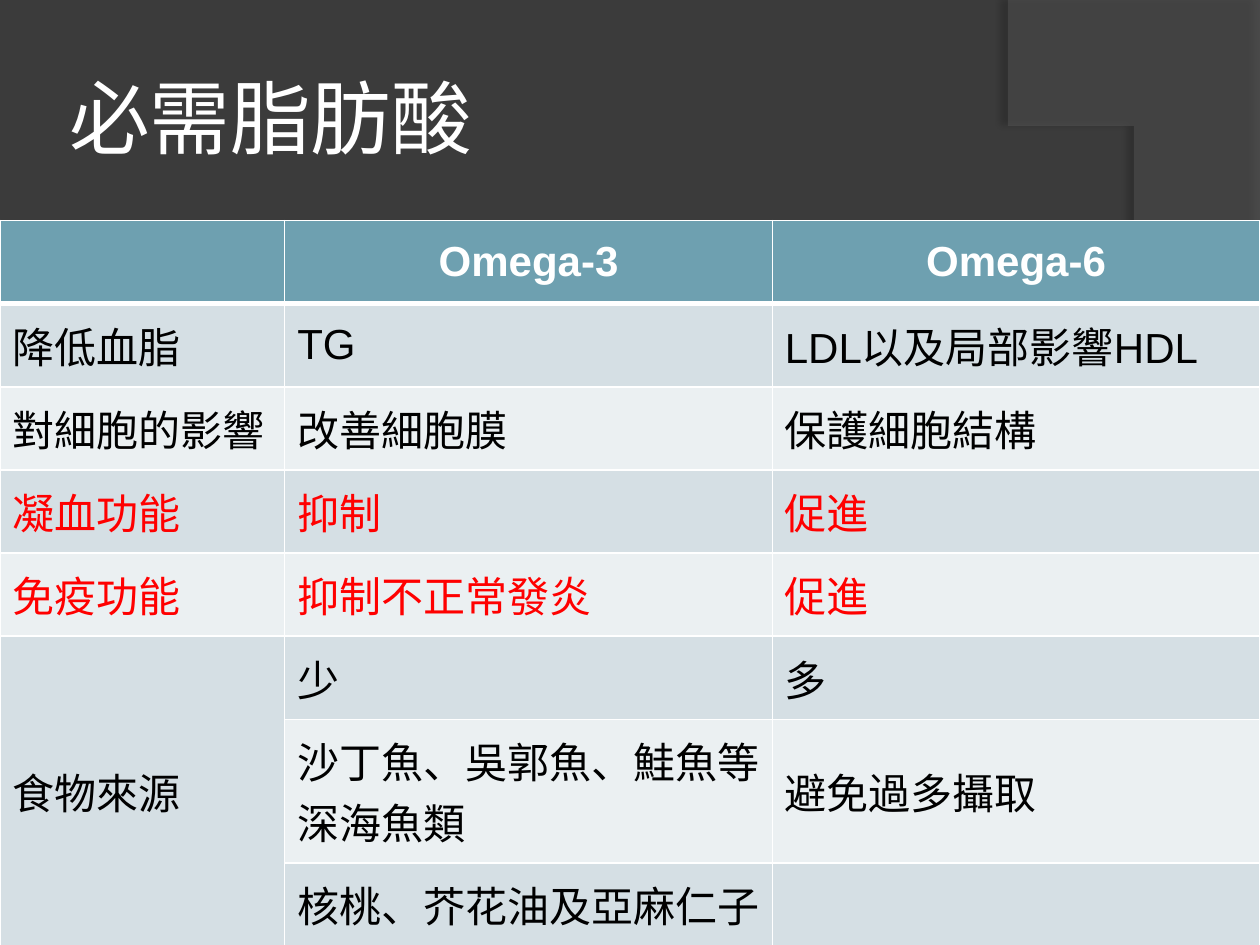
from lxml.etree import SubElement
from pptx import Presentation
from pptx.dml.color import RGBColor
from pptx.enum.text import MSO_ANCHOR, PP_ALIGN
from pptx.oxml import parse_xml
from pptx.oxml.ns import nsdecls, qn
from pptx.util import Inches, Pt

COLORS = {"back": "3B3B3B", "arc": "5E5E5E", "white": "FFFFFF", "black": "000000",
          "red": "FF0000", "head": "6EA0B0", "odd": "D5DFE4", "even": "EBF0F2"}


def rgb(name):
    return RGBColor.from_string(COLORS[name])


def write(tf, text, align=PP_ALIGN.LEFT, **font):
    p = tf.paragraphs[0]
    p.alignment = align
    r = p.add_run()
    r.text = text
    r.font.color.rgb = rgb(font.pop("color"))
    for key, value in font.items():
        setattr(r.font, key, value)


prs = Presentation()
prs.slide_width, prs.slide_height = W, H = Inches(10), Inches(7.5)
s = prs.slides.add_slide(prs.slide_layouts[6])
s.background.fill.solid()
s.background.fill.fore_color.rgb = rgb("back")

# Curved panel on the right: a cubic arc as short segments
arc = [(8.21, 7.5), (9.35, 6.19), (10.18, 3), (8, 0)]
STEPS = 40
points = [(10, 7.5)]
for i in range(STEPS + 1):
    t = i / STEPS
    weights = ((1 - t) ** 3, 3 * t * (1 - t) ** 2, 3 * t ** 2 * (1 - t), t ** 3)
    points.append(tuple(sum(w * pt[axis] for w, pt in zip(weights, arc)) for axis in (0, 1)))
fb = s.shapes.build_freeform(10, 0.02, scale=Inches(1))
fb.add_line_segments(points, close=True)
sp = fb.convert_to_shape()
sp.fill.solid()
sp.fill.fore_color.rgb = rgb("arc")
sp.line.fill.background()
color = sp.fill._xPr.find(qn("a:solidFill"))[0]
SubElement(color, qn("a:alpha"), val="40000")
sp._element.spPr.append(parse_xml(
    f'<a:effectLst {nsdecls("a")}><a:outerShdw blurRad="{Pt(4)}" dist="{Pt(4)}" dir="10800000">'
    f'<a:srgbClr val="{COLORS["black"]}"><a:alpha val="45000"/></a:srgbClr>'
    '</a:outerShdw></a:effectLst>'))

# Title
sp = s.shapes.add_textbox(int(W * 0.05), int(H * 0.04), Inches(8.17), Inches(1.25))
tf = sp.text_frame
frame = {"word_wrap": True, "vertical_anchor": MSO_ANCHOR.MIDDLE}
frame.update({f"margin_{side}": Inches(0.05) for side in ("left", "top", "right", "bottom")})
for key, value in frame.items():
    setattr(tf, key, value)
write(tf, "必需脂肪酸", size=Pt(46), name="Roboto", color="white")

# Comparison table
rows = [
    ("", "Omega-3", "Omega-6"),
    ("降低血脂", "TG", "LDL以及局部影響HDL"),
    ("對細胞的影響", "改善細胞膜", "保護細胞結構"),
    ("凝血功能", "抑制", "促進"),
    ("免疫功能", "抑制不正常發炎", "促進"),
    ("食物來源", "少", "多"),
    ("", "沙丁魚、吳郭魚、鮭魚等深海魚類", "避免過多攝取"),
    ("", "核桃、芥花油及亞麻仁子", ""),
]
RED_ROWS, TALL_ROW, SOURCE_ROW = (3, 4), 6, 5
table = s.shapes.add_table(len(rows), 3, 0, Inches(1.75), W, Inches(5.75)).table
for col, width in zip(table.columns, (2.26, 3.87, 3.87)):
    col.width = Inches(width)

for i, row in enumerate(rows):
    table.rows[i].height = Inches(1.14 if i == TALL_ROW else 0.66)
    head = i == 0
    fill = "head" if head else "odd" if i % 2 else "even"
    ink = "white" if head else "red" if i in RED_ROWS else "black"
    for j, text in enumerate(row):
        cell = table.cell(i, j)
        cell.vertical_anchor = MSO_ANCHOR.MIDDLE
        # Borders, with a thick rule under the header
        for side in "LRTB":
            thick = (head and side == "B") or (i == 1 and side == "T")
            ln = SubElement(cell._tc.get_or_add_tcPr(), qn(f"a:ln{side}"),
                            w=str(Pt(3 if thick else 1)))
            SubElement(SubElement(ln, qn("a:solidFill")), qn("a:srgbClr"), val=COLORS["white"])
        cell.fill.solid()
        cell.fill.fore_color.rgb = rgb("odd" if j == 0 and i >= SOURCE_ROW else fill)
        if text:
            write(cell.text_frame, text, PP_ALIGN.CENTER if head else PP_ALIGN.LEFT,
                  size=Pt(24), name="Arial", bold=head, color=ink)
        else:
            cell.text_frame.paragraphs[0].font.size = Pt(24)
table.cell(SOURCE_ROW, 0).merge(table.cell(len(rows) - 1, 0))

prs.save("out.pptx")
